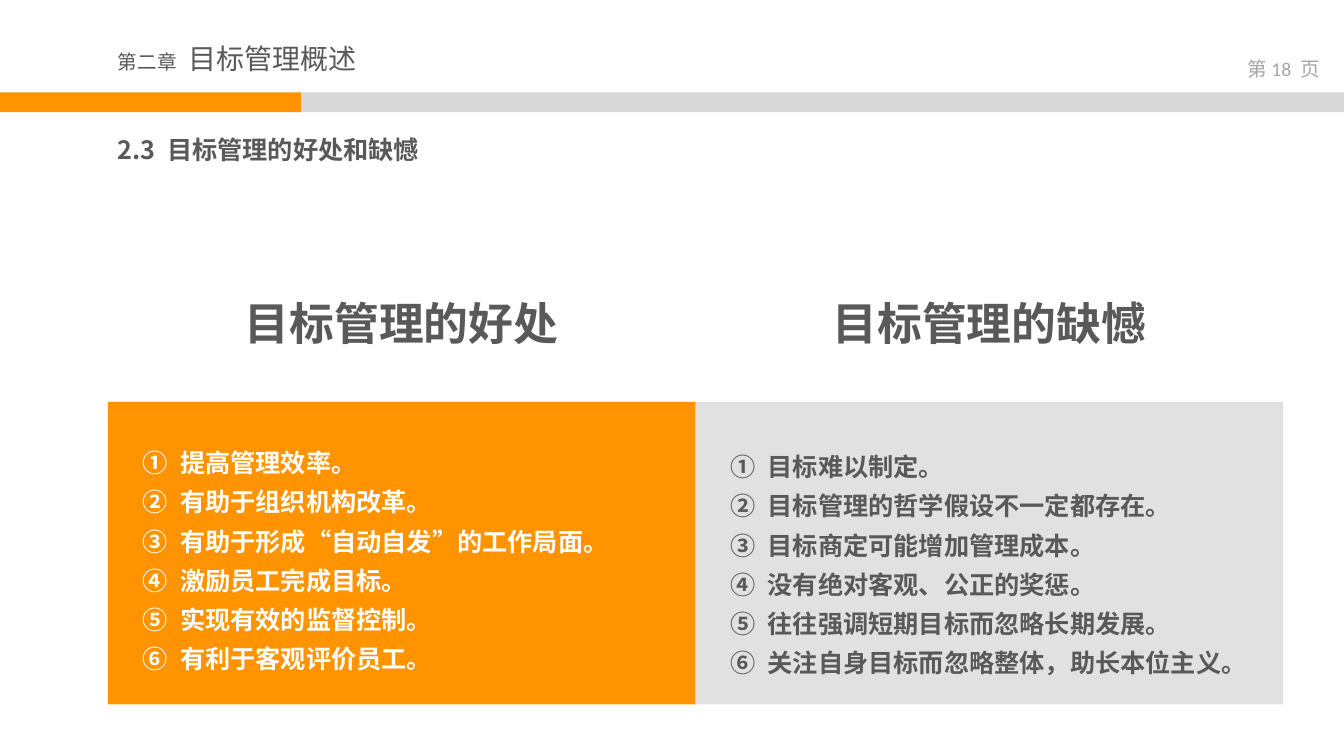
from lxml.etree import SubElement
from pptx import Presentation
from pptx.dml.color import RGBColor
from pptx.enum.shapes import MSO_SHAPE
from pptx.enum.text import MSO_ANCHOR, MSO_AUTO_SIZE, PP_ALIGN
from pptx.oxml.ns import qn
from pptx.util import Cm, Pt

ORANGE = RGBColor(0xFF, 0x93, 0x00)
BAR_GRAY = RGBColor(0xD9, 0xD9, 0xD9)
PANEL_GRAY = RGBColor(0xE1, 0xE1, 0xE1)
PAGE_GRAY = RGBColor(0xA6, 0xA6, 0xA6)
TEXT_GRAY = RGBColor(0x59, 0x59, 0x59)
WHITE = RGBColor(0xFF, 0xFF, 0xFF)

SLIDE_WIDTH = 33.87
BAR_SPLIT = 7.59
MARGIN = 2.72
PANEL_WIDTH = 14.81

COLUMNS = [
    ("目标管理的好处", ORANGE, WHITE, 10.92, [
        "提高管理效率。",
        "有助于组织机构改革。",
        "有助于形成“自动自发”的工作局面。",
        "激励员工完成目标。",
        "实现有效的监督控制。",
        "有利于客观评价员工。",
    ]),
    ("目标管理的缺憾", PANEL_GRAY, TEXT_GRAY, 11.02, [
        "目标难以制定。",
        "目标管理的哲学假设不一定都存在。",
        "目标商定可能增加管理成本。",
        "没有绝对客观、公正的奖惩。",
        "往往强调短期目标而忽略长期发展。",
        "关注自身目标而忽略整体，助长本位主义。",
    ]),
]


class SlideBuilder:
    """Draws styled elements on the current slide."""

    east_asian_font = "Noto Sans CJK SC"
    list_font = "Times New Roman"

    def __init__(self, slide):
        self.slide = slide

    def rectangle(self, left, top, width, height, color):
        shape = self.slide.shapes.add_shape(
            MSO_SHAPE.RECTANGLE, Cm(left), Cm(top), Cm(width), Cm(height))
        shape.shadow.inherit = False
        shape.fill.solid()
        shape.fill.fore_color.rgb = color
        shape.line.fill.background()

    def frame(self, left, top, width, height, anchor=MSO_ANCHOR.TOP):
        box = self.slide.shapes.add_textbox(Cm(left), Cm(top), Cm(width), Cm(height))
        text_frame = box.text_frame
        text_frame.word_wrap = True
        text_frame.auto_size = MSO_AUTO_SIZE.SHAPE_TO_FIT_TEXT
        text_frame.vertical_anchor = anchor
        return text_frame

    def run(self, paragraph, text, size, color, bold=False, font=east_asian_font):
        run = paragraph.add_run()
        run.text = text
        run.font.size = Pt(size)
        run.font.bold = bold
        run.font.color.rgb = color
        run.font.name = font
        properties = run.font._element
        SubElement(properties, qn("a:ea"), typeface=self.east_asian_font)

    def line(self, position, runs, color, bold=False,
             align=PP_ALIGN.LEFT, anchor=MSO_ANCHOR.TOP):
        paragraph = self.frame(*position, anchor).paragraphs[0]
        paragraph.alignment = align
        for text, size, font in runs:
            self.run(paragraph, text, size, color, bold, font)

    def numbered_list(self, position, items, color):
        text_frame = self.frame(*position)
        for index, item in enumerate(items):
            paragraph = text_frame.paragraphs[0] if index == 0 else text_frame.add_paragraph()
            properties = paragraph._p.get_or_add_pPr()
            properties.set("marL", str(Cm(0.95)))
            properties.set("indent", str(-Cm(0.95)))
            SubElement(properties, qn("a:buFont"), typeface="+mj-ea")
            SubElement(properties, qn("a:buAutoNum"), type="circleNumDbPlain")
            paragraph.line_spacing = 1.3
            self.run(paragraph, item, 18, color, True, self.list_font)


def main():
    presentation = Presentation()
    presentation.slide_width = Cm(SLIDE_WIDTH)
    presentation.slide_height = Cm(19.05)
    builder = SlideBuilder(presentation.slides.add_slide(presentation.slide_layouts[6]))
    font = builder.east_asian_font

    builder.rectangle(0, 2.33, BAR_SPLIT, 0.5, ORANGE)
    builder.rectangle(BAR_SPLIT, 2.33, SLIDE_WIDTH - BAR_SPLIT, 0.5, BAR_GRAY)
    builder.line((30.83, 1.3, 3.04, 1.02),
                 [("第 ", 14, font), ("18 ", 14, "Calibri"), (" 页", 14, font)],
                 PAGE_GRAY, align=PP_ALIGN.CENTER)
    builder.line((MARGIN, 0.91, 13.79, 1.12),
                 [("第二章", 14, font), (" ", 16, font), (" 目标管理概述", 20, font)],
                 TEXT_GRAY, anchor=MSO_ANCHOR.MIDDLE)
    builder.line((MARGIN, 3.25, 13.79, 1.02),
                 [("2.3 ", 18, font), (" 目标管理的好处和缺憾", 18, font)],
                 TEXT_GRAY, True, anchor=MSO_ANCHOR.MIDDLE)

    for index, (title, fill, color, list_top, items) in enumerate(COLUMNS):
        left = MARGIN + index * PANEL_WIDTH
        builder.rectangle(left, 10.13, PANEL_WIDTH, 7.62, fill)
        builder.line((left + 2.02, 7.32, 10.77, 1.6), [(title, 32, font)],
                     TEXT_GRAY, True, PP_ALIGN.CENTER)
        builder.numbered_list((left + 0.62, list_top, 13.56, 6.2), items, color)

    presentation.save("out.pptx")


if __name__ == "__main__":
    main()
